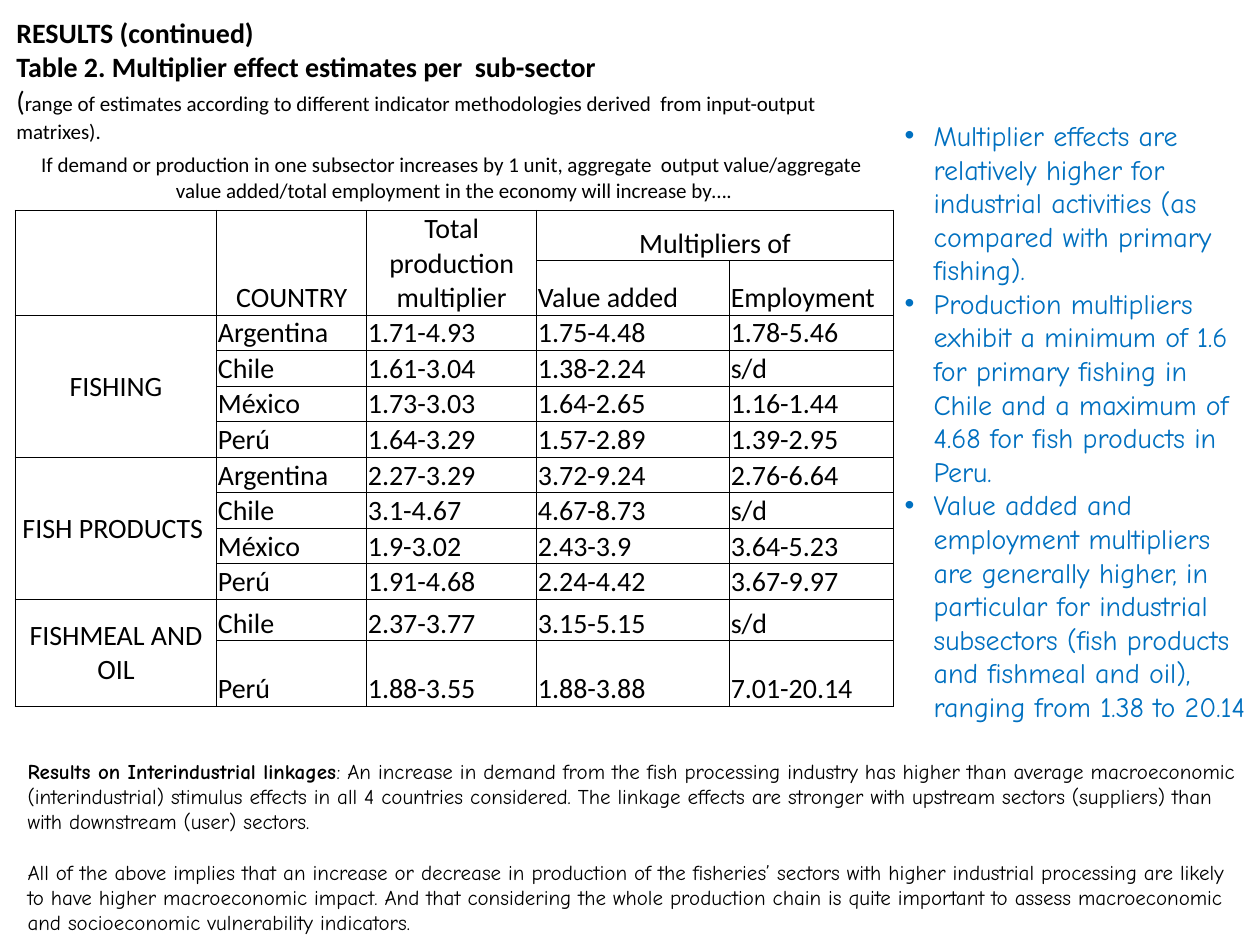
from dataclasses import dataclass
from lxml import etree
from pptx import Presentation
from pptx.dml.color import RGBColor
from pptx.enum.text import MSO_ANCHOR as Anchor, MSO_AUTO_SIZE as AutoSize, PP_ALIGN as Align
from pptx.oxml.ns import qn
from pptx.slide import Slide
from pptx.util import Inches, Pt

BLACK = RGBColor(0x00, 0x00, 0x00)
BLUE = RGBColor(0x00, 0x70, 0xC0)
NO_GRID_STYLE = "{2D5ABB26-0587-4C30-8999-92F81FD0307C}"
COLUMN_WIDTHS = [1.6, 1.19, 1.35, 1.53, 1.23, 0.07]
ROW_HEIGHTS = [1.03, 0.52, 0.4, 0.43] + [0.28] * 8 + [0.33, 0.52]
FIRST_DATA_ROW = 4

SUBSECTORS = [
    ("FISHING", [
        ("Argentina", "1.71-4.93", "1.75-4.48", "1.78-5.46"),
        ("Chile", "1.61-3.04", "1.38-2.24", "s/d"),
        ("México", "1.73-3.03", "1.64-2.65", "1.16-1.44"),
        ("Perú", "1.64-3.29", "1.57-2.89", "1.39-2.95"),
    ]),
    ("FISH PRODUCTS ", [
        ("Argentina", "2.27-3.29", "3.72-9.24", "2.76-6.64"),
        ("Chile", "3.1-4.67", "4.67-8.73", "s/d"),
        ("México", "1.9-3.02", "2.43-3.9", "3.64-5.23"),
        ("Perú", "1.91-4.68", "2.24-4.42", "3.67-9.97"),
    ]),
    ("FISHMEAL AND OIL", [
        ("Chile", "2.37-3.77", "3.15-5.15", "s/d"),
        ("Perú", "1.88-3.55", "1.88-3.88", "7.01-20.14"),
    ]),
]

FINDINGS = [
    "Multiplier effects are relatively higher for industrial activities (as compared with primary fishing).",
    "Production multipliers exhibit a minimum of 1.6 for primary fishing in Chile and a maximum of 4.68 "
    "for fish products in Peru.",
    "Value added and employment multipliers are generally higher, in particular for industrial subsectors "
    "(fish products and fishmeal and oil), ranging from 1.38 to 20.14",
]

LINKAGES = [
    [("Results on Interindustrial linkages", True),
     (": An increase in demand from the fish processing industry has higher than average macroeconomic "
      "(interindustrial) stimulus effects in all 4 countries considered. The linkage effects are stronger "
      "with upstream sectors (suppliers) than with downstream (user) sectors.", False)],
    [("All of the above implies that an increase or decrease in production of the fisheries’ sectors with "
      "higher industrial processing are likely to have higher macroeconomic impact. And that considering "
      "the whole production chain is quite important to assess macroeconomic and socioeconomic "
      "vulnerability indicators.", False)],
]


def add_text(paragraph, text, *, font="Calibri", size=16, color=BLACK, bold=False):
    run = paragraph.add_run()
    run.text = text
    run.font.name = font
    run.font.size = Pt(size)
    run.font.color.rgb = color
    run.font.bold = bold


def next_paragraph(frame, index):
    return frame.add_paragraph() if index else frame.paragraphs[0]


def border_cell(cell, sides):
    properties = cell._tc.get_or_add_tcPr()
    for side in "LRTB":
        line = etree.SubElement(properties, qn(f"a:ln{side}"), w=str(Pt(0.5)))
        if side in sides:
            fill = etree.SubElement(line, qn("a:solidFill"))
            etree.SubElement(fill, qn("a:srgbClr"), val=str(BLACK))
        else:
            etree.SubElement(line, qn("a:noFill"))


def cell_sides(row, column):
    if row < 2:
        return "B" if row == 1 else ""
    if column == 0 and row < FIRST_DATA_ROW:
        return "LRT" if row == 2 else "LRB"
    return "LRTB"


@dataclass
class SlideBuilder:
    slide: Slide
    note_font: str = "Comic Neue"
    note_size: int = 12
    list_size: int = 16
    list_color: RGBColor = BLUE

    def grid(self, left, top, widths, heights):
        frame = self.slide.shapes.add_table(
            len(heights), len(widths), Inches(left), Inches(top),
            Inches(sum(widths)), Inches(sum(heights)))
        table = frame.table
        table.first_row = table.horz_banding = False
        table._tbl.tblPr.find(qn("a:tableStyleId")).text = NO_GRID_STYLE
        for column, width in zip(table.columns, widths):
            column.width = Inches(width)
        for row_index, height in enumerate(heights):
            table.rows[row_index].height = Inches(height)
            for column_index in range(len(widths)):
                cell = table.cell(row_index, column_index)
                border_cell(cell, cell_sides(row_index, column_index))
                cell.fill.background()
                cell.margin_left = cell.margin_right = cell.margin_top = Inches(0.01)
                cell.margin_bottom = 0
                cell.vertical_anchor = Anchor.BOTTOM
        return table

    def cell(self, table, row, column, text, *, span=(1, 1), align=Align.LEFT,
             anchor=Anchor.BOTTOM, **text_format):
        cell = table.cell(row, column)
        if span != (1, 1):
            cell.merge(table.cell(row + span[0] - 1, column + span[1] - 1))
        cell.vertical_anchor = anchor
        paragraph = cell.text_frame.paragraphs[0]
        paragraph.alignment = align
        add_text(paragraph, text, **text_format)
        return cell

    def bullets(self, left, top, width, height, items):
        body = self.slide.placeholders[1]
        body.left, body.top = Inches(left), Inches(top)
        body.width, body.height = Inches(width), Inches(height)
        frame = body.text_frame
        frame.auto_size = AutoSize.NONE
        for index, item in enumerate(items):
            paragraph = next_paragraph(frame, index)
            properties = paragraph._p.get_or_add_pPr()
            properties.set("marL", str(Inches(0.23)))
            properties.set("indent", str(-Inches(0.23)))
            etree.SubElement(properties, qn("a:buFont"), typeface="Arial")
            etree.SubElement(properties, qn("a:buChar"), char="•")
            paragraph.space_before = Pt(0)
            add_text(paragraph, item, font=self.note_font, size=self.list_size, color=self.list_color)

    def note(self, left, top, width, height, paragraphs):
        box = self.slide.shapes.add_textbox(Inches(left), Inches(top), Inches(width), Inches(height))
        frame = box.text_frame
        frame.word_wrap = True
        for index, runs in enumerate(paragraphs):
            paragraph = next_paragraph(frame, index)
            if index:
                paragraph.space_before = Pt(14.4)
            for text, bold in runs:
                add_text(paragraph, text, font=self.note_font, size=self.note_size, bold=bold)


def fill_multipliers(builder, table):
    centered = {"align": Align.CENTER}
    middle = {"align": Align.CENTER, "anchor": Anchor.MIDDLE}
    heading = builder.cell(table, 0, 0, "RESULTS (continued)", span=(1, 5), bold=True)
    add_text(heading.text_frame.add_paragraph(),
             "Table 2. Multiplier effect estimates per  sub-sector", bold=True)
    subtitle = heading.text_frame.add_paragraph()
    add_text(subtitle, "(")
    add_text(subtitle, "range of estimates according to different indicator methodologies derived  "
             "from input-output matrixes).", size=12)
    builder.cell(table, 1, 0, "If demand or production in one subsector increases by 1 unit, aggregate  "
                 "output value/aggregate  value added/total employment in the economy will increase by….",
                 span=(1, 6), size=12, **middle)
    builder.cell(table, 2, 1, "COUNTRY", span=(2, 1), **centered)
    builder.cell(table, 2, 2, "Total production multiplier", span=(2, 1), **centered)
    builder.cell(table, 2, 3, "Multipliers of", span=(1, 3), **centered)
    builder.cell(table, 3, 3, "Value added")
    builder.cell(table, 3, 4, "Employment", span=(1, 2))
    row = FIRST_DATA_ROW
    for subsector, countries in SUBSECTORS:
        builder.cell(table, row, 0, subsector, span=(len(countries), 1), **middle)
        for values in countries:
            for column, value in enumerate(values, 1):
                builder.cell(table, row, column, value, span=(1, 2 if column == 4 else 1))
            row += 1


def main():
    presentation = Presentation()
    presentation.slide_width, presentation.slide_height = Inches(10), Inches(7.5)
    slide = presentation.slides.add_slide(presentation.slide_layouts[1])
    title = slide.shapes.title._element
    title.getparent().remove(title)
    builder = SlideBuilder(slide)
    fill_multipliers(builder, builder.grid(0.12, 0.12, COLUMN_WIDTHS, ROW_HEIGHTS))
    builder.note(0.12, 5.97, 9.88, 1.51, LINKAGES)
    builder.bullets(7.08, 0.89, 2.92, 5.22, FINDINGS)
    presentation.save("out.pptx")


if __name__ == "__main__":
    main()
